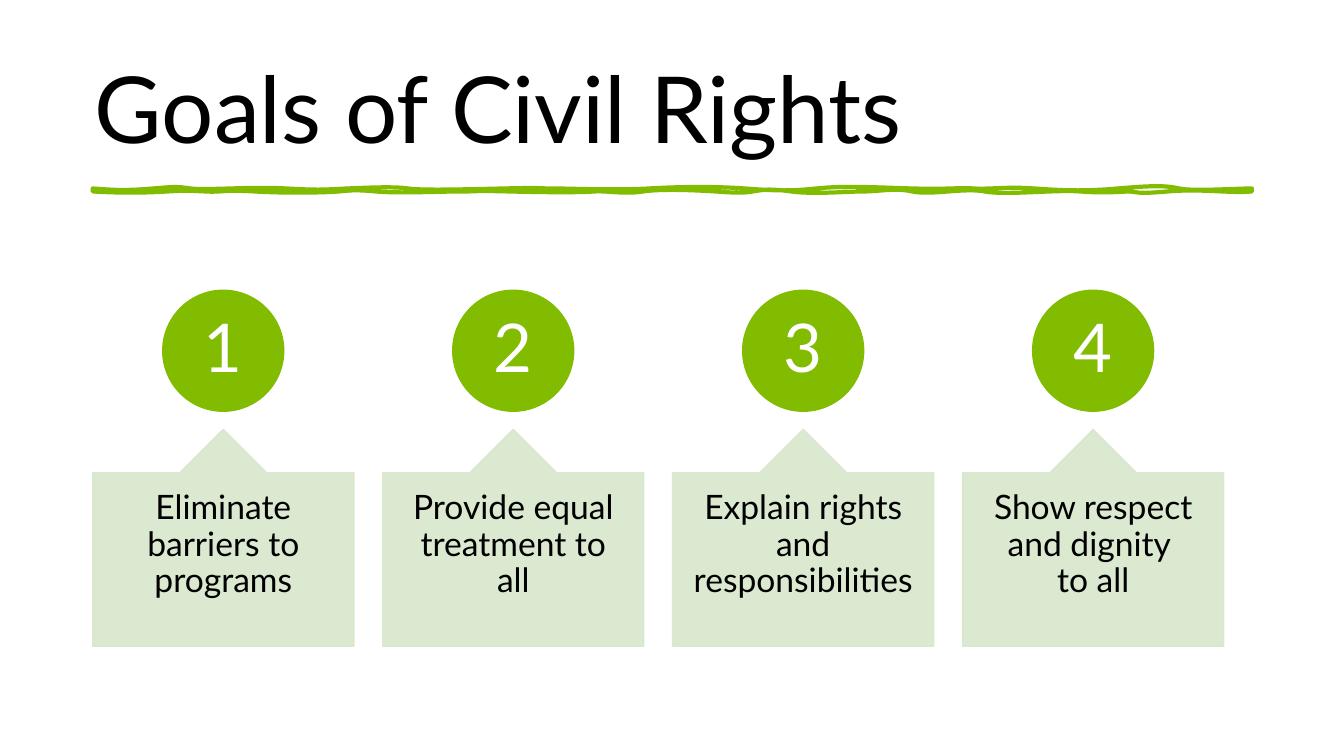
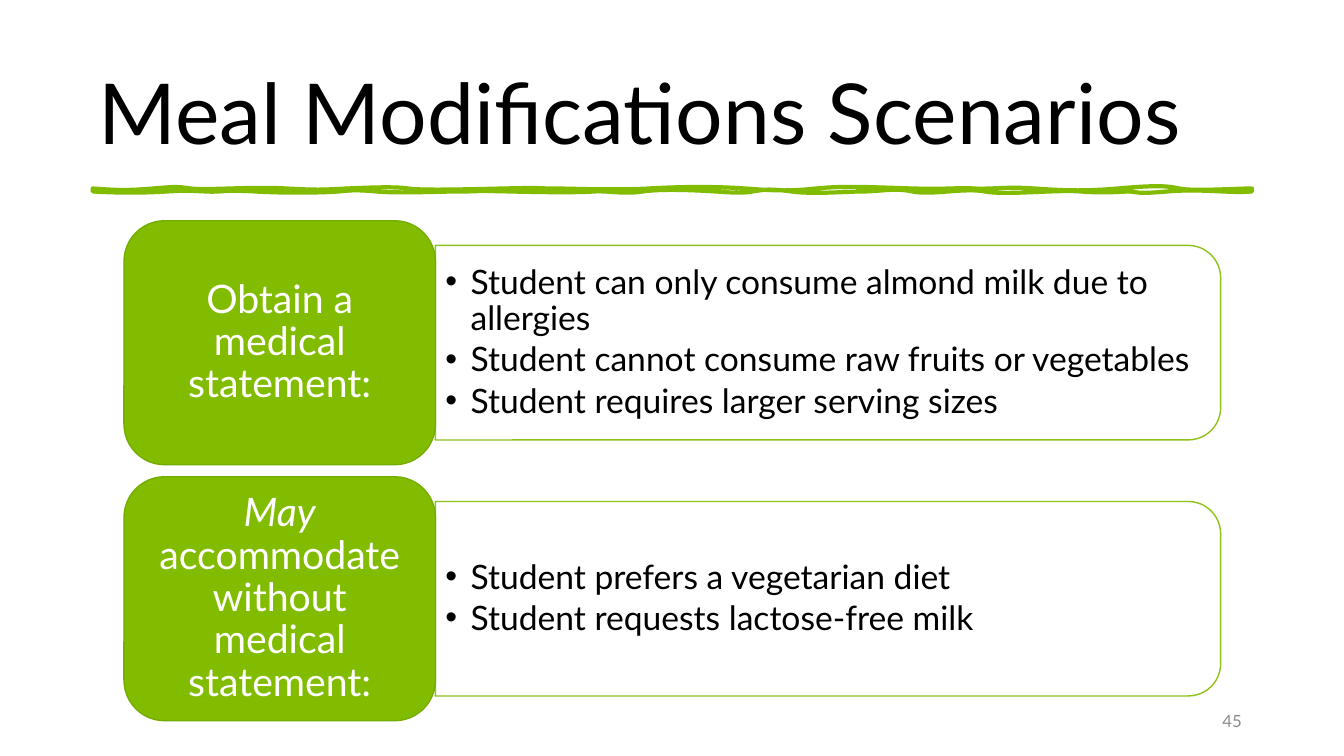
from lxml.etree import SubElement
from pptx import Presentation
from pptx.dml.color import RGBColor
from pptx.enum.shapes import MSO_SHAPE
from pptx.enum.text import MSO_ANCHOR, MSO_AUTO_SIZE, PP_ALIGN
from pptx.oxml.ns import qn
from pptx.util import Emu, Pt

PX = 9144  # EMU per px, 100 px to the inch
SLIDE_H = 750
SLIDE_W = SLIDE_H * 16 / 9

FONT = "Lato"
GREEN = RGBColor(0x82, 0xBC, 0x00)
DARK_GREEN = RGBColor(0x76, 0xAB, 0x00)
PALE_GREEN = RGBColor(0xD8, 0xE7, 0xCC)
WHITE = RGBColor(0xFF, 0xFF, 0xFF)
BLACK = RGBColor(0, 0, 0)
GREY = RGBColor(0x8C, 0x8C, 0x8C)

# Brush stroke under the title: start point, then two control points and an end
BRUSH_START = (92, 187)
BRUSH_CURVES = [
    (117, 189, 128, 189, 152, 187), (176, 185, 175, 185, 189, 187),
    (204, 189, 249, 185, 284, 187), (319, 189, 323, 188, 345, 187),
    (367, 186, 392, 185, 405, 187), (418, 189, 458, 188, 500, 187),
    (542, 186, 530, 187, 549, 187), (567, 187, 609, 189, 644, 187),
    (678, 185, 711, 185, 739, 187), (766, 189, 782, 190, 810, 187),
    (839, 184, 869, 186, 905, 187), (942, 188, 950, 186, 966, 187),
    (982, 188, 998, 185, 1026, 187), (1054, 189, 1075, 190, 1109, 187),
    (1144, 184, 1157, 184, 1170, 187), (1183, 190, 1226, 187, 1242, 187),
    (1242, 188, 1242, 189, 1242, 190),
    (1219, 192, 1193, 187, 1158, 190), (1124, 193, 1129, 190, 1121, 190),
    (1113, 190, 1096, 192, 1072, 190), (1048, 188, 997, 194, 977, 190),
    (957, 186, 924, 194, 905, 190), (887, 186, 874, 190, 856, 190),
    (839, 190, 807, 193, 785, 190), (763, 187, 759, 188, 747, 190),
    (736, 192, 725, 191, 710, 190), (694, 189, 657, 187, 638, 190),
    (619, 193, 601, 189, 589, 190), (577, 191, 546, 191, 506, 190),
    (465, 189, 479, 190, 457, 190), (434, 190, 396, 192, 373, 190),
    (351, 188, 348, 189, 336, 190), (324, 191, 287, 192, 253, 190),
    (218, 188, 223, 191, 204, 190), (184, 189, 184, 189, 166, 190),
    (149, 191, 127, 192, 92, 190), (92, 189, 92, 188, 92, 187),
]

GOALS = [
    ["Eliminate barriers to programs"],
    ["Provide equal treatment to all"],
    ["Explain rights and responsibilities"],
    ["Show respect and dignity ", "to all"],
]

# Heading as (text, italic) parts, then the cases under it
SCENARIOS = [
    ([("Obtain a medical statement:", False)],
     ["Student can only consume almond milk due to allergies",
      "Student cannot consume raw fruits or vegetables",
      "Student requires larger serving sizes"]),
    ([("May", True), (" accommodate without medical statement:", False)],
     ["Student prefers a vegetarian diet",
      "Student requests lactose-free milk"]),
]


def emu(*lengths):
    return [Emu(round(length * PX)) for length in lengths]


def set_alpha(fill, percent):
    color = fill._xPr.find(qn("a:solidFill"))[0]
    SubElement(color, qn("a:alpha"), val=str(percent * 1000))


def add_panel(slide, kind, box, fill, line, alpha=None):
    panel = slide.shapes.add_shape(kind, *emu(*box))
    panel.shadow.inherit = False
    panel.fill.solid()
    panel.fill.fore_color.rgb = fill
    panel.line.color.rgb = line
    panel.line.width = Pt(1)
    if alpha:
        set_alpha(panel.fill, alpha)
        set_alpha(panel.line.fill, alpha)
    return panel


def add_text_box(slide, box):
    return slide.shapes.add_textbox(*emu(*box)).text_frame


def style_text(frame, size, color, align=PP_ALIGN.LEFT,
               anchor=MSO_ANCHOR.MIDDLE, insets=(10, 5)):
    frame.word_wrap = True
    frame.auto_size = MSO_AUTO_SIZE.NONE
    frame.vertical_anchor = anchor
    frame.margin_left, frame.margin_top = emu(*insets)
    frame.margin_right, frame.margin_bottom = emu(*insets)
    for paragraph in frame.paragraphs:
        paragraph.alignment = align
        paragraph.line_spacing = 0.9
        for run in paragraph.runs:
            run.font.name = FONT
            run.font.size = Pt(size)
            run.font.color.rgb = color


def add_bullet(paragraph, indent):
    properties = paragraph._p.get_or_add_pPr()
    properties.set("marL", str(indent * PX))
    properties.set("indent", str(-indent * PX))
    SubElement(properties, qn("a:buFont"), typeface="Arial")
    SubElement(properties, qn("a:buChar"), char="•")


def add_brush_stroke(slide):
    builder = slide.shapes.build_freeform(*BRUSH_START, scale=PX)
    builder.add_line_segments([curve[4:] for curve in BRUSH_CURVES], close=True)
    stroke = builder.convert_to_shape()
    # Bend each straight segment into its cubic curve
    left, top = BRUSH_START
    segments = list(stroke._element.iter(qn("a:lnTo")))
    for segment, curve in zip(segments, BRUSH_CURVES):
        segment.tag = qn("a:cubicBezTo")
        segment.remove(segment[0])
        for x, y in zip(curve[::2], curve[1::2]):
            SubElement(segment, qn("a:pt"), x=str(x - left), y=str(y - top))
    stroke.shadow.inherit = False
    stroke.fill.background()
    stroke.line.color.rgb = GREEN
    stroke.line.width = Pt(3)


def add_titled_slide(deck, title_text, box, size):
    slide = deck.slides.add_slide(deck.slide_layouts[5])
    add_brush_stroke(slide)
    title = slide.shapes.title
    title.left, title.top, title.width, title.height = emu(*box)
    title.text_frame.text = title_text
    style_text(title.text_frame, size, BLACK)
    return slide


def add_goal(slide, box, number, lines):
    left, top, width, height = box
    # Numbered circle
    diameter, callout_height = 120, 215
    circle = add_panel(slide, MSO_SHAPE.OVAL,
                       (left + (width - diameter) / 2, top, diameter, diameter),
                       GREEN, GREEN)
    circle.text_frame.text = str(number)
    style_text(circle.text_frame, 48, WHITE, PP_ALIGN.CENTER, insets=(5, 5))
    # Callout pointing at the circle
    callout = add_panel(slide, MSO_SHAPE.UP_ARROW_CALLOUT,
                        (left, top + height - callout_height, width, callout_height),
                        PALE_GREEN, PALE_GREEN, alpha=90)
    for index, value in enumerate((0.5, 0.2, 0.2, 1)):
        callout.adjustments[index] = value
    callout.text_frame.text = "\n".join(lines)
    style_text(callout.text_frame, 24, BLACK, PP_ALIGN.CENTER,
               MSO_ANCHOR.TOP, insets=(20, 18))


def add_scenario(slide, box, heading, cases):
    left, top, width, height = box
    label_width, body_height = 309, 193
    body_left, body_width = left + label_width, width - label_width
    # Outline rounded on its right side: a tall shape turned a quarter
    outline = add_panel(slide, MSO_SHAPE.ROUND_2_SAME_RECTANGLE,
                        (body_left + (body_width - body_height) / 2,
                         top + (height - body_width) / 2, body_height, body_width),
                        WHITE, GREEN, alpha=90)
    outline.rotation = 90
    # Bulleted cases
    case_height = 175
    frame = add_text_box(slide, (body_left, top + (height - case_height) / 2,
                                 body_width - 10, case_height))
    frame.text = "\n".join(cases)
    style_text(frame, 24, BLACK)
    for paragraph in frame.paragraphs:
        paragraph.space_after = Pt(3.6)
        add_bullet(paragraph, 25)
    # Heading label
    label = add_panel(slide, MSO_SHAPE.ROUNDED_RECTANGLE,
                      (left, top, label_width, height), GREEN, DARK_GREEN)
    paragraph = label.text_frame.paragraphs[0]
    for text, italic in heading:
        run = paragraph.add_run()
        run.text = text
        run.font.italic = italic
    style_text(label.text_frame, 28, WHITE, PP_ALIGN.CENTER, insets=(12, 6))


def add_page_number(slide, number):
    frame = add_text_box(slide, (942, 695, 300, 40))
    frame.text = str(number)
    style_text(frame, 12, GREY, PP_ALIGN.RIGHT)
    frame.paragraphs[0].line_spacing = 1.0


def build_goals_slide(deck):
    slide = add_titled_slide(deck, "Goals of Civil Rights", (84, 40, 1150, 145), 66)
    left, top, width, height = 92, 288, 1122, 353
    goal_width = 259
    pitch = (width - goal_width) / (len(GOALS) - 1)
    for index, lines in enumerate(GOALS):
        add_goal(slide, (left + index * pitch, top, goal_width, height),
                 index + 1, lines)


def build_scenarios_slide(deck):
    slide = add_titled_slide(deck, "Meal Modifications Scenarios",
                             (88, 63, 1156, 106), 60)
    left, top, width, height, gap = 123, 219, 1088, 242, 12
    for index, (heading, cases) in enumerate(SCENARIOS):
        add_scenario(slide, (left, top + index * (height + gap), width, height),
                     heading, cases)
    add_page_number(slide, 45)


def main():
    deck = Presentation()
    deck.slide_width, deck.slide_height = emu(SLIDE_W, SLIDE_H)
    build_goals_slide(deck)
    build_scenarios_slide(deck)
    deck.save("out.pptx")


if __name__ == "__main__":
    main()
